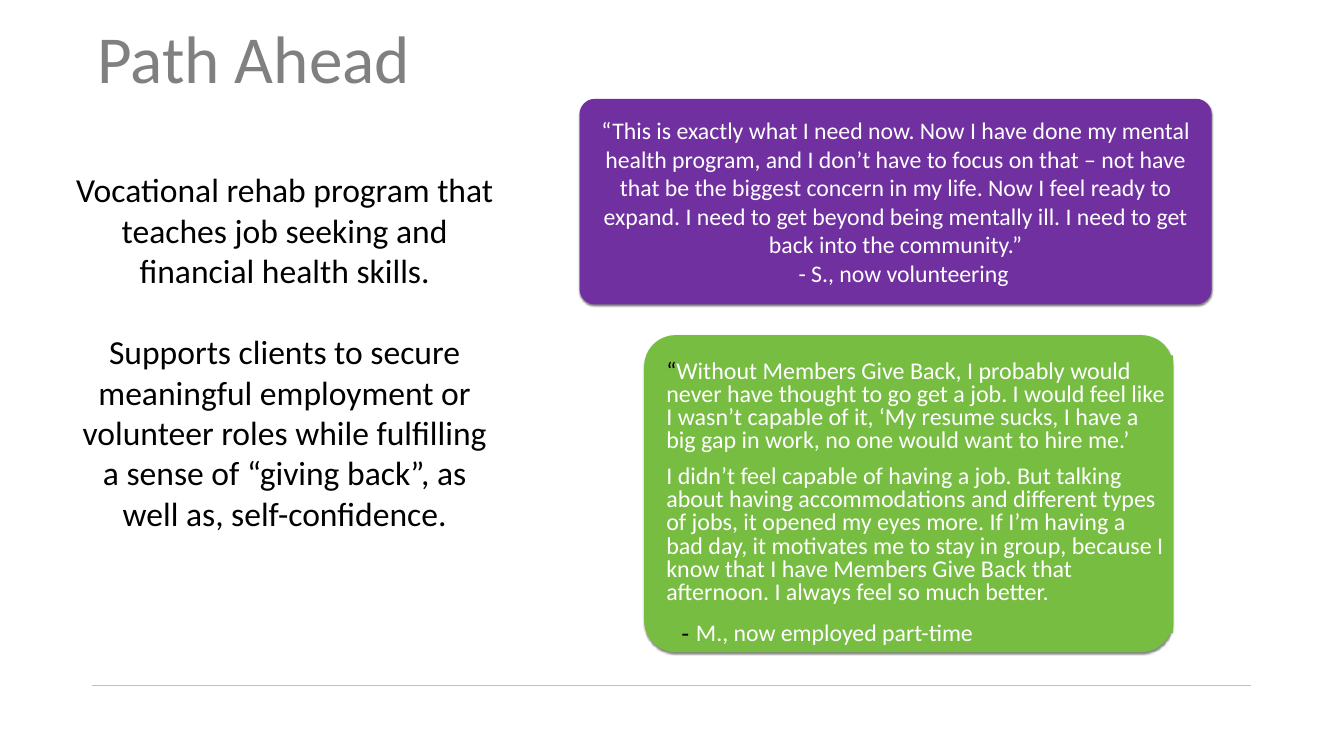
from dataclasses import dataclass
from lxml.etree import SubElement
from pptx import Presentation
from pptx.dml.color import RGBColor as RGB
from pptx.enum.shapes import MSO_CONNECTOR as Connector, MSO_SHAPE as Shape
from pptx.enum.text import MSO_ANCHOR as Anchor, PP_ALIGN as Align
from pptx.oxml.ns import qn
from pptx.util import Pt


@dataclass(frozen=True)
class Theme:
    font: str = "Calibri"
    dash_font: str = "Arial"
    black: RGB = RGB(0, 0, 0)
    white: RGB = RGB(255, 255, 255)
    gray: RGB = RGB(0x80, 0x80, 0x80)
    rule: RGB = RGB(0xBF, 0xBF, 0xBF)
    purple: RGB = RGB(0x70, 0x30, 0xA0)
    green: RGB = RGB(0x77, 0xBD, 0x42)
    title: float = 96
    body: float = 48
    quote: float = 34
    long_quote: float = 34.3


theme = Theme()
presentation = Presentation()
presentation.slide_width, presentation.slide_height = Pt(1920), Pt(1080)
slide = presentation.slides.add_slide(presentation.slide_layouts[6])


def add_text(paragraphs, box, size, color, fill=None, shape=None, align=Align.LEFT,
             anchor=Anchor.TOP, inset=7.2, gap=0, spacing=None):
    if shape is None:
        shape = slide.shapes.add_textbox(*map(Pt, box))
    if fill is not None:
        shape.fill.solid()
        shape.fill.fore_color.rgb = fill
    frame = shape.text_frame
    frame.word_wrap, frame.vertical_anchor = True, anchor
    frame.margin_left = frame.margin_right = frame.margin_top = frame.margin_bottom = Pt(inset)
    for index, runs in enumerate(paragraphs):
        paragraph = frame.paragraphs[0] if index == 0 else frame.add_paragraph()
        paragraph.alignment, paragraph.line_spacing = align, spacing
        if index:
            paragraph.space_before = Pt(gap)
        for text, *style in [(runs,)] if isinstance(runs, str) else runs:
            run = paragraph.add_run()
            run.text = text
            run.font.size = Pt(size)
            run.font.color.rgb = style[0] if style else color
            run.font.name = style[1] if len(style) > 1 else theme.font
    return frame


def add_card(box, fill, rounding):
    card = slide.shapes.add_shape(Shape.ROUNDED_RECTANGLE, *map(Pt, box))
    card.adjustments[0] = rounding
    card.fill.solid()
    card.fill.fore_color.rgb = fill
    card.line.fill.background()
    card.shadow.inherit = False
    effects = card.element.spPr.find(qn("a:effectLst"))
    shadow = SubElement(effects, qn("a:outerShdw"), blurRad=str(Pt(3)), dist=str(Pt(2)),
                        dir="5400000", rotWithShape="0")
    shade = SubElement(shadow, qn("a:srgbClr"), val=str(theme.black))
    SubElement(shade, qn("a:alpha"), val="50000")
    return card


rule = slide.shapes.add_connector(Connector.STRAIGHT, Pt(131.8), Pt(979.2), Pt(1787.8), Pt(979.2))
rule.line.color.rgb = theme.rule
rule.line.width = Pt(0.5)
SubElement(rule.element.spPr, qn("a:effectLst"))

add_text([
    "Vocational rehab program that teaches job seeking and financial health skills.",
    "Supports clients to secure meaningful employment or volunteer roles while fulfilling "
    "a sense of “giving back”, as well as, self-confidence.",
], (96.5, 234.7, 620.6, 537.8), theme.body, theme.black, align=Align.CENTER, gap=58.6)

add_text(["Path Ahead"], (131.8, 0, 1656, 177), theme.title, theme.gray,
         anchor=Anchor.MIDDLE, spacing=0.9)

volunteer_card = add_card((828, 141.1, 902.9, 293.8), theme.purple, 0.075)
volunteer_frame = add_text([
    "“This is exactly what I need now. Now I have done my mental health program, and I "
    "don’t have to focus on that – not have that be the biggest concern in my life. Now I "
    "feel ready to expand. I need to get beyond being mentally ill. I need to get back "
    "into the community.”",
    "- S., now volunteering",
], None, theme.quote, theme.white, shape=volunteer_card, align=Align.CENTER,
    anchor=Anchor.MIDDLE, inset=8)
volunteer_frame.paragraphs[1]._p.get_or_add_pPr().set("marL", str(Pt(23)))

add_card((920.2, 478.8, 755.3, 452.9), theme.green, 0.099)
add_text([
    [("“", theme.black),
     ("Without Members Give Back, I probably would never have thought to go get a job. I "
      "would feel like I wasn’t capable of it, ‘My resume sucks, I have a big gap in work, "
      "no one would want to hire me.’",)],
    "I didn’t feel capable of having a job. But talking about having accommodations and "
    "different types of jobs, it opened my eyes more. If I’m having a bad day, it motivates "
    "me to stay in group, because I know that I have Members Give Back that afternoon. I "
    "always feel so much better.",
], (943.9, 507.6, 732.2, 397.4), theme.long_quote, theme.white, fill=theme.green,
    inset=8, gap=19, spacing=0.8)
add_text([[("- ", theme.black, theme.dash_font), ("M., now employed part-time",)]],
         (965.5, 874.1, 665.3, 57.6), theme.quote, theme.white, fill=theme.green,
         anchor=Anchor.MIDDLE, inset=8)

presentation.save("out.pptx")
